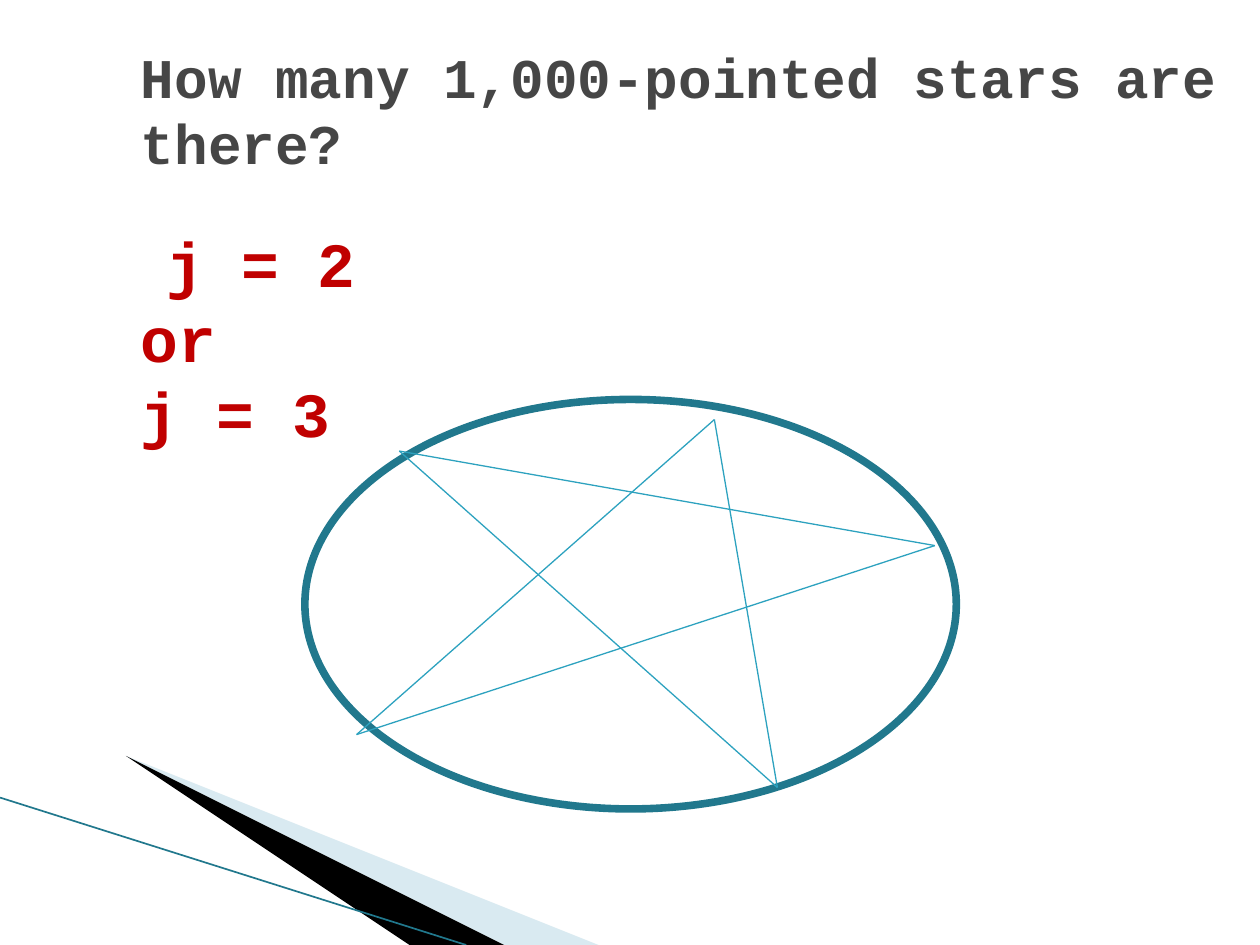
"""Build the slide that asks how many 1,000-pointed stars there are."""
from dataclasses import dataclass
from itertools import pairwise

import pptx
import pptx.dml.color
import pptx.enum.shapes
import pptx.oxml.ns
import pptx.oxml.xmlchemy
import pptx.presentation
import pptx.shapes.connector
import pptx.slide
import pptx.util
from lxml import etree

Inches = pptx.util.Inches
Pt = pptx.util.Pt
RGBColor = pptx.dml.color.RGBColor
qn = pptx.oxml.ns.qn

GREY = RGBColor(0x46, 0x46, 0x46)
RED = RGBColor(0xC0, 0x00, 0x00)
TEAL = RGBColor(0x21, 0x78, 0x8D)
CYAN = RGBColor(0x2D, 0xA2, 0xBF)
PALE = RGBColor(0xA0, 0xCB, 0xDC)
BLACK = RGBColor(0x00, 0x00, 0x00)

Point = tuple[float, float]


@dataclass(frozen=True)
class Wedge:
    corners: tuple[Point, ...]
    color: RGBColor
    opacity: int = 100


@dataclass(frozen=True)
class TextLine:
    text: str
    size: int
    spacing: int
    color: RGBColor
    before: int = 0
    indent: float = 0


WEDGES = (
    Wedge(((0.55, 6.5), (5.95, 7.5), (4.56, 7.5)), PALE, 40),
    Wedge(((0.53, 6.49), (4.57, 7.5), (3.72, 7.5)), BLACK),
)
STAR_POINTS = ((3.17, 3.58), (6.17, 6.25), (5.67, 3.33), (2.83, 5.83), (7.42, 4.33))
TEXT_LINES = (
    TextLine("How many 1,000-pointed stars are there?", 32, 38, GREY),
    TextLine("j = 2", 36, 43, RED, before=28, indent=0.2),
    TextLine("or", 36, 43, RED),
    TextLine("j = 3", 36, 43, RED),
)


def draw_wedge(slide: pptx.slide.Slide, wedge: Wedge) -> None:
    start, *rest = wedge.corners
    builder = slide.shapes.build_freeform(*start, scale=Inches(1))
    builder.add_line_segments(rest)
    shape = builder.convert_to_shape()
    shape.shadow.inherit = False
    shape.fill.solid()
    shape.fill.fore_color.rgb = wedge.color
    shape.line.fill.background()
    if wedge.opacity < 100:
        color = shape.fill._xPr.find(qn("a:solidFill"))[0]
        etree.SubElement(color, qn("a:alpha"), val=str(wedge.opacity * 1000))


def draw_line(slide: pptx.slide.Slide, start: Point, end: Point,
              color: RGBColor, width: float) -> None:
    line = slide.shapes.add_connector(
        pptx.enum.shapes.MSO_CONNECTOR.STRAIGHT, *map(Inches, start + end))
    line.line.color.rgb = color
    line.line.width = Pt(width)
    etree.SubElement(line._element.spPr, qn("a:effectLst"))


def draw_circle(slide: pptx.slide.Slide) -> None:
    circle = slide.shapes.add_shape(
        pptx.enum.shapes.MSO_SHAPE.OVAL,
        Inches(2.42), Inches(3.17), Inches(5.17), Inches(3.25))
    circle.shadow.inherit = False
    circle.fill.background()
    circle.line.color.rgb = TEAL
    circle.line.width = Pt(4.33)


def write_question(slide: pptx.slide.Slide) -> None:
    question = slide.shapes.add_textbox(
        Inches(1.02), Inches(0.29), Inches(9), Inches(3.35)).text_frame
    question.word_wrap = True
    for index, line in enumerate(TEXT_LINES):
        paragraph = question.add_paragraph() if index else question.paragraphs[0]
        paragraph.text = line.text
        paragraph.line_spacing = Pt(line.spacing)
        if line.before:
            paragraph.space_before = Pt(line.before)
        if line.indent:
            paragraph._p.get_or_add_pPr().set("marL", str(Inches(line.indent)))
        paragraph.font.name = "Courier New"
        paragraph.font.size = Pt(line.size)
        paragraph.font.bold = True
        paragraph.font.color.rgb = line.color


def main() -> None:
    deck = pptx.Presentation()
    deck.slide_width, deck.slide_height = Inches(10), Inches(7.5)
    slide = deck.slides.add_slide(deck.slide_layouts[6])
    for wedge in WEDGES:
        draw_wedge(slide, wedge)
    draw_line(slide, (0, 6.33), (3.7, 7.5), TEAL, 0.95)
    draw_circle(slide)
    write_question(slide)
    for start, end in pairwise(STAR_POINTS + STAR_POINTS[:1]):
        draw_line(slide, start, end, CYAN, 0.75)
    deck.save("out.pptx")


if __name__ == "__main__":
    main()
